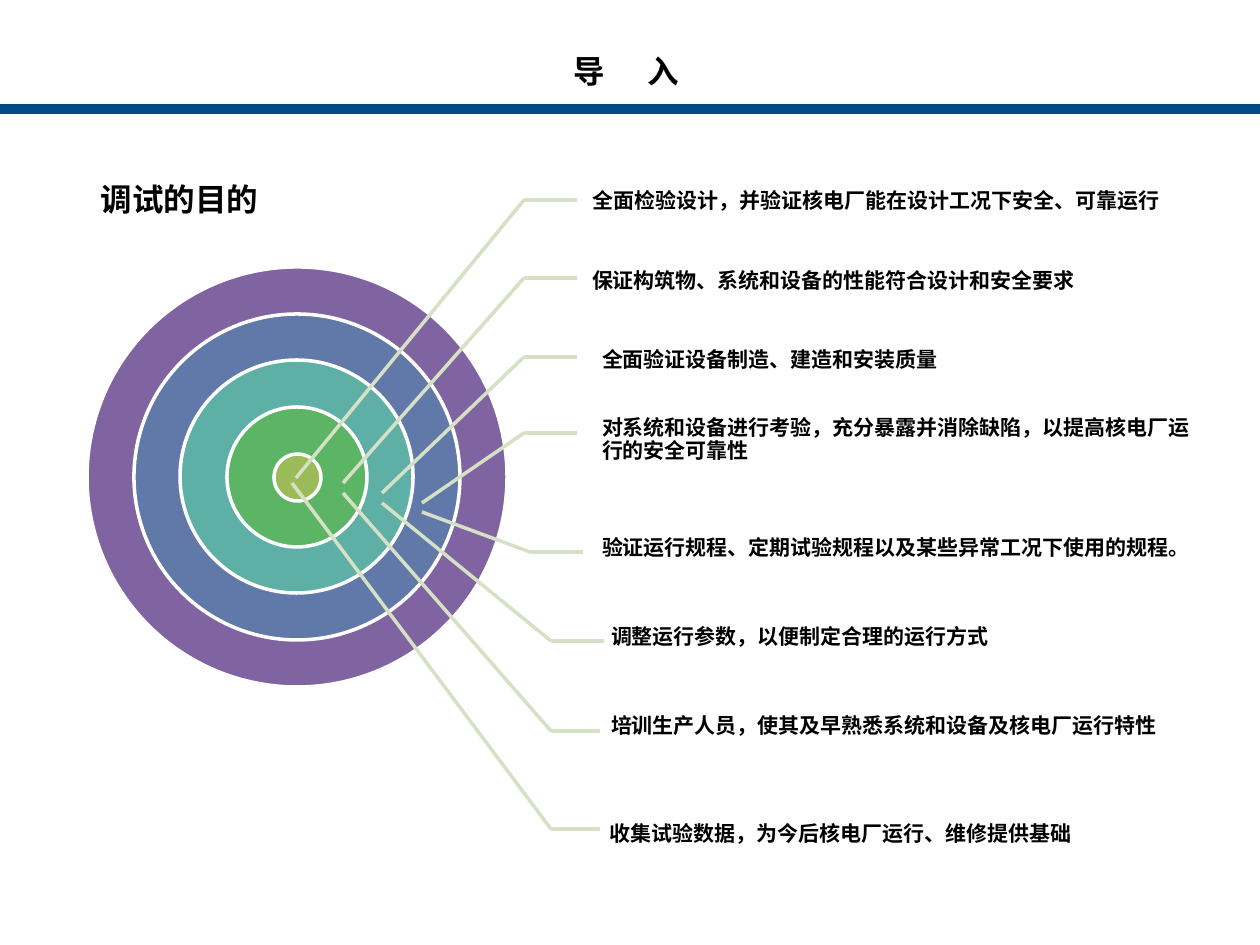
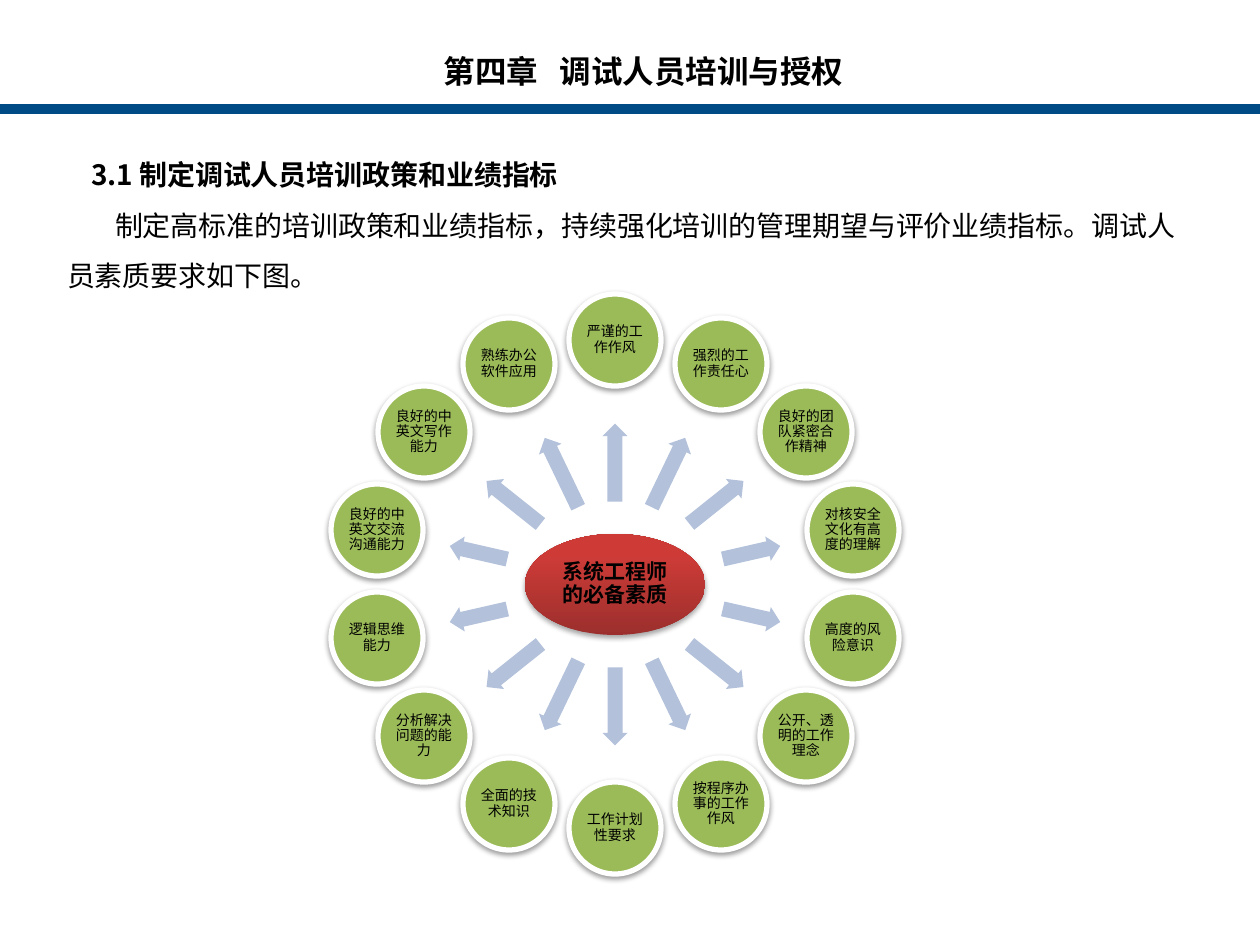
from dataclasses import dataclass, replace
from math import cos, radians, sin

from lxml import etree
from pptx import Presentation
from pptx.dml.color import RGBColor
from pptx.enum.shapes import MSO_CONNECTOR, MSO_SHAPE
from pptx.enum.text import MSO_ANCHOR, MSO_AUTO_SIZE, PP_ALIGN
from pptx.oxml.ns import qn
from pptx.util import Emu, Pt

ELLIPSE, RECTANGLE, ARROW = MSO_SHAPE.OVAL, MSO_SHAPE.RECTANGLE, MSO_SHAPE.RIGHT_ARROW
STRAIGHT = MSO_CONNECTOR.STRAIGHT
LEFT, CENTER = PP_ALIGN.LEFT, PP_ALIGN.CENTER
TOP, MIDDLE = MSO_ANCHOR.TOP, MSO_ANCHOR.MIDDLE
NO_AUTOFIT = MSO_AUTO_SIZE.NONE
TITLE_ONLY = 5
PX_PER_INCH = 126


@dataclass(frozen=True)
class Theme:
    font: str = "Calibri"
    heading_font: str = "Noto Sans CJK SC"
    ink: str = "000000"
    paper: str = "FFFFFF"
    band: str = "004A86"
    leader: str = "D5E0C4"
    bubble: str = "9BBB59"
    arrow: str = "B3C1DB"
    hub_dark: str = "9C2F2D"
    hub_light: str = "CE3B37"
    title_size: int = 18
    body_size: int = 16
    label_size: int = 12
    bubble_size: int = 8
    line_width: int = 2
    bubble_line_width: int = 3


THEME = Theme()


@dataclass(frozen=True)
class Area:
    left: int
    top: int
    width: int
    height: int


@dataclass(frozen=True)
class TextStyle:
    size: int
    bold: bool = False
    font: str = THEME.font
    align: PP_ALIGN = LEFT
    spacing: float = 1.0
    after: float = 0
    indent: int = 0


@dataclass(frozen=True)
class Ring:
    diameter: int
    color: str


@dataclass(frozen=True)
class Callout:
    text: str
    area: Area
    tip: tuple[int, int]
    bend: tuple[int, int]
    end: int
    spacing: float = 0.9
    after: float = 4.2


@dataclass(frozen=True)
class Spoke:
    length: int
    radius: int


TITLE = TextStyle(THEME.title_size, bold=True)
SUBTITLE = TextStyle(THEME.title_size, bold=True, spacing=1.5, indent=44)
HEADING = TextStyle(THEME.body_size, bold=True, font=THEME.heading_font, spacing=1.5, indent=24)
BODY = TextStyle(THEME.body_size, spacing=1.5, indent=48)
LABEL = TextStyle(THEME.label_size, bold=True)
HUB = TextStyle(THEME.label_size, bold=True, align=CENTER, spacing=0.9, after=4.2)
BUBBLE = TextStyle(THEME.bubble_size, align=CENTER, spacing=0.9, after=2.8)

BAND = Area(0, 106, 1260, 6)
BOX_INSETS = (13, 6, 13, 6)
LABEL_INSETS = (11, 3, 3, 3)

RING_CENTER = (297, 477)
RINGS = [
    Ring(420, "8064A2"),
    Ring(326, "6179A8"),
    Ring(233, "5EAFA6"),
    Ring(140, "5CB565"),
    Ring(47, "9BBB59"),
]
CALLOUTS = [
    Callout("全面检验设计，并验证核电厂能在设计工况下安全、可靠运行",
            Area(582, 165, 606, 74), (296, 478), (524, 200), 577),
    Callout("保证构筑物、系统和设备的性能符合设计和安全要求",
            Area(581, 245, 636, 74), (343, 483), (524, 278), 577),
    Callout("全面验证设备制造、建造和安装质量",
            Area(591, 324, 611, 74), (382, 493), (524, 357), 577),
    Callout("对系统和设备进行考验，充分暴露并消除缺陷，以提高核电厂运行的安全可靠性",
            Area(591, 403, 621, 74), (422, 503), (524, 433), 577),
    Callout("验证运行规程、定期试验规程以及某些异常工况下使用的规程。",
            Area(591, 512, 600, 74), (422, 512), (530, 552), 583),
    Callout("调整运行参数，以便制定合理的运行方式",
            Area(600, 601, 600, 74), (382, 503), (551, 641), 604),
    Callout("培训生产人员，使其及早熟悉系统和设备及核电厂运行特性",
            Area(600, 690, 600, 74), (343, 493), (551, 731), 600),
    Callout("收集试验数据，为今后核电厂运行、维修提供基础",
            Area(599, 790, 564, 74), (292, 483), (551, 829), 600, spacing=1.5, after=0),
]

WHEEL_CENTER = (615, 584)
WHEEL_RADIUS = 244
BUBBLE_DIAMETER = 92
ARROW_THICKNESS = 25
# Spokes from the vertical axis towards the horizontal one
SPOKES = [Spoke(78, 122), Spoke(77, 124), Spoke(69, 130), Spoke(59, 140)]
# Clockwise from the top
QUALITIES = [
    "严谨的工作作风", "强烈的工作责任心", "良好的团队紧密合作精神", "对核安全文化有高度的理解",
    "高度的风险意识", "公开、透明的工作理念", "按程序办事的工作作风", "工作计划性要求",
    "全面的技术知识", "分析解决问题的能力", "逻辑思维能力", "良好的中英文交流沟通能力",
    "良好的中英文写作能力", "熟练办公软件应用",
]


def px(value: float) -> Emu:
    return Emu(round(value * 914400 / PX_PER_INCH))


def bounds(area: Area) -> tuple[Emu, Emu, Emu, Emu]:
    return px(area.left), px(area.top), px(area.width), px(area.height)


def centered(center: tuple[float, float], width: int, height: int) -> Area:
    return Area(round(center[0] - width / 2), round(center[1] - height / 2), width, height)


def rgb(color: str) -> RGBColor:
    return RGBColor.from_string(color)


def format_span(span, style: TextStyle) -> None:
    span.font.name = style.font
    span.font.size = Pt(style.size)
    span.font.bold = style.bold
    span.font.color.rgb = rgb(THEME.ink)
    etree.SubElement(span._r.get_or_add_rPr(), qn("a:ea"), typeface=style.font)


def format_paragraph(para, style: TextStyle) -> None:
    properties = para._p.get_or_add_pPr()
    properties.set("marL", "0")
    properties.set("indent", str(px(style.indent)))
    para.alignment = style.align
    para.line_spacing = style.spacing
    para.space_before = Pt(0)
    para.space_after = Pt(style.after)
    for span in para.runs:
        format_span(span, style)


def write(shape, lines: list[tuple[str, TextStyle]], insets: tuple[int, int, int, int],
          anchor: MSO_ANCHOR) -> None:
    frame = shape.text_frame
    frame.word_wrap = True
    frame.auto_size = NO_AUTOFIT
    frame.vertical_anchor = anchor
    frame.margin_left, frame.margin_top, frame.margin_right, frame.margin_bottom = map(px, insets)
    frame.text = "\n".join(text for text, _ in lines)
    for para, (_, style) in zip(frame.paragraphs, lines):
        format_paragraph(para, style)


def add_text(page, area: Area, lines: list[tuple[str, TextStyle]],
             insets: tuple[int, int, int, int] = BOX_INSETS, anchor: MSO_ANCHOR = TOP) -> None:
    write(page.shapes.add_textbox(*bounds(area)), lines, insets, anchor)


def add_figure(page, kind: MSO_SHAPE, area: Area, fill: str, line: str = "",
               line_width: int = THEME.line_width):
    figure = page.shapes.add_shape(kind, *bounds(area))
    figure.shadow.inherit = False
    figure.fill.solid()
    figure.fill.fore_color.rgb = rgb(fill)
    if line:
        figure.line.color.rgb = rgb(line)
        figure.line.width = Pt(line_width)
    else:
        figure.line.fill.background()
    return figure


def add_shadow(figure, opacity: int, distance: float) -> None:
    effects = figure.element.spPr.find(qn("a:effectLst"))
    shadow = etree.SubElement(effects, qn("a:outerShdw"), blurRad=str(Pt(3.1)),
                              dist=str(Pt(distance)), dir="5400000", rotWithShape="0")
    color = etree.SubElement(shadow, qn("a:srgbClr"), val=THEME.ink)
    etree.SubElement(color, qn("a:alpha"), val=str(opacity * 1000))


def add_leader(page, start: tuple[int, int], end: tuple[int, int]) -> None:
    leader = page.shapes.add_connector(STRAIGHT, *map(px, start + end))
    leader.line.color.rgb = rgb(THEME.leader)
    leader.line.width = Pt(THEME.line_width)
    etree.SubElement(leader.element.spPr, qn("a:effectLst"))


def add_page(deck, title_parts: tuple[str, str], area: Area, gap: int):
    """Add a page whose two title parts are set apart by a space widened by gap px."""
    page = deck.slides.add_slide(deck.slide_layouts[TITLE_ONLY])
    title = page.shapes.title
    title.left, title.top, title.width, title.height = bounds(area)
    first, second = title_parts
    write(title, [(first, TITLE)], BOX_INSETS, TOP)
    para = title.text_frame.paragraphs[0]
    for text, widening in ((" ", gap), (second, 0)):
        span = para.add_run()
        span.text = text
        format_span(span, TITLE)
        span._r.get_or_add_rPr().set("spc", str(round(px(widening).pt * 100)))
    return page


def move_band_to_layout(page) -> None:
    band = add_figure(page, RECTANGLE, BAND, THEME.band, THEME.band)
    page.slide_layout.shapes.element.insert(2, band.element)


def build_purpose_page(deck):
    page = add_page(deck, ("导", "入"), Area(560, 46, 160, 50), gap=36)
    # Target rings, from the outside in
    for ring in RINGS:
        area = centered(RING_CENTER, ring.diameter, ring.diameter)
        add_figure(page, ELLIPSE, area, ring.color, THEME.paper)
    # Bent leaders with their labels
    for callout in CALLOUTS:
        style = replace(LABEL, spacing=callout.spacing, after=callout.after)
        add_text(page, callout.area, [(callout.text, style)], LABEL_INSETS, MIDDLE)
        add_leader(page, callout.bend, (callout.end, callout.bend[1]))
        add_leader(page, callout.bend, callout.tip)
    add_text(page, Area(44, 155, 250, 63), [("调试的目的", SUBTITLE)])
    return page


def add_hub(page) -> None:
    hub = add_figure(page, ELLIPSE, centered(WHEEL_CENTER, 180, 101), THEME.hub_dark)
    hub.fill.gradient()
    hub.fill.gradient_angle = 90
    dark, light = hub.fill.gradient_stops
    dark.color.rgb, dark.position = rgb(THEME.hub_dark), 0
    light.color.rgb, light.position = rgb(THEME.hub_light), 0.8
    add_shadow(hub, 35, 1.8)
    write(hub, [("系统工程师的必备素质", HUB)], (2, 2, 2, 2), MIDDLE)


def on_wheel(angle: float, radius: int) -> tuple[float, float]:
    x, y = WHEEL_CENTER
    return x + radius * cos(radians(angle)), y + radius * sin(radians(angle))


def build_training_page(deck) -> None:
    page = add_page(deck, ("第四章", "调试人员培训与授权"), Area(431, 46, 460, 50), gap=14)
    add_text(page, Area(54, 135, 1142, 165), [
        ("3.1 制定调试人员培训政策和业绩指标", HEADING),
        ("制定高标准的培训政策和业绩指标，持续强化培训的管理期望与评价业绩指标。"
         "调试人员素质要求如下图。", BODY),
    ])
    add_hub(page)
    # Arrows and bubbles around the hub
    half = len(QUALITIES) // 2
    for index, quality in enumerate(QUALITIES):
        angle = index * 360 / len(QUALITIES) - 90
        spoke = SPOKES[min(index % half, half - index % half)]
        area = centered(on_wheel(angle, spoke.radius), spoke.length, ARROW_THICKNESS)
        arrow = add_figure(page, ARROW, area, THEME.arrow)
        arrow.adjustments[0], arrow.adjustments[1] = 0.6, 0.5
        arrow.rotation = angle % 360

        area = centered(on_wheel(angle, WHEEL_RADIUS), BUBBLE_DIAMETER, BUBBLE_DIAMETER)
        bubble = add_figure(page, ELLIPSE, area, THEME.bubble, THEME.paper,
                            THEME.bubble_line_width)
        add_shadow(bubble, 38, 1.6)
        write(bubble, [(quality, BUBBLE)], (1, 1, 1, 1), MIDDLE)


def main() -> None:
    deck = Presentation()
    deck.slide_width, deck.slide_height = px(1260), px(945)
    move_band_to_layout(build_purpose_page(deck))
    build_training_page(deck)
    deck.save("out.pptx")


if __name__ == "__main__":
    main()
